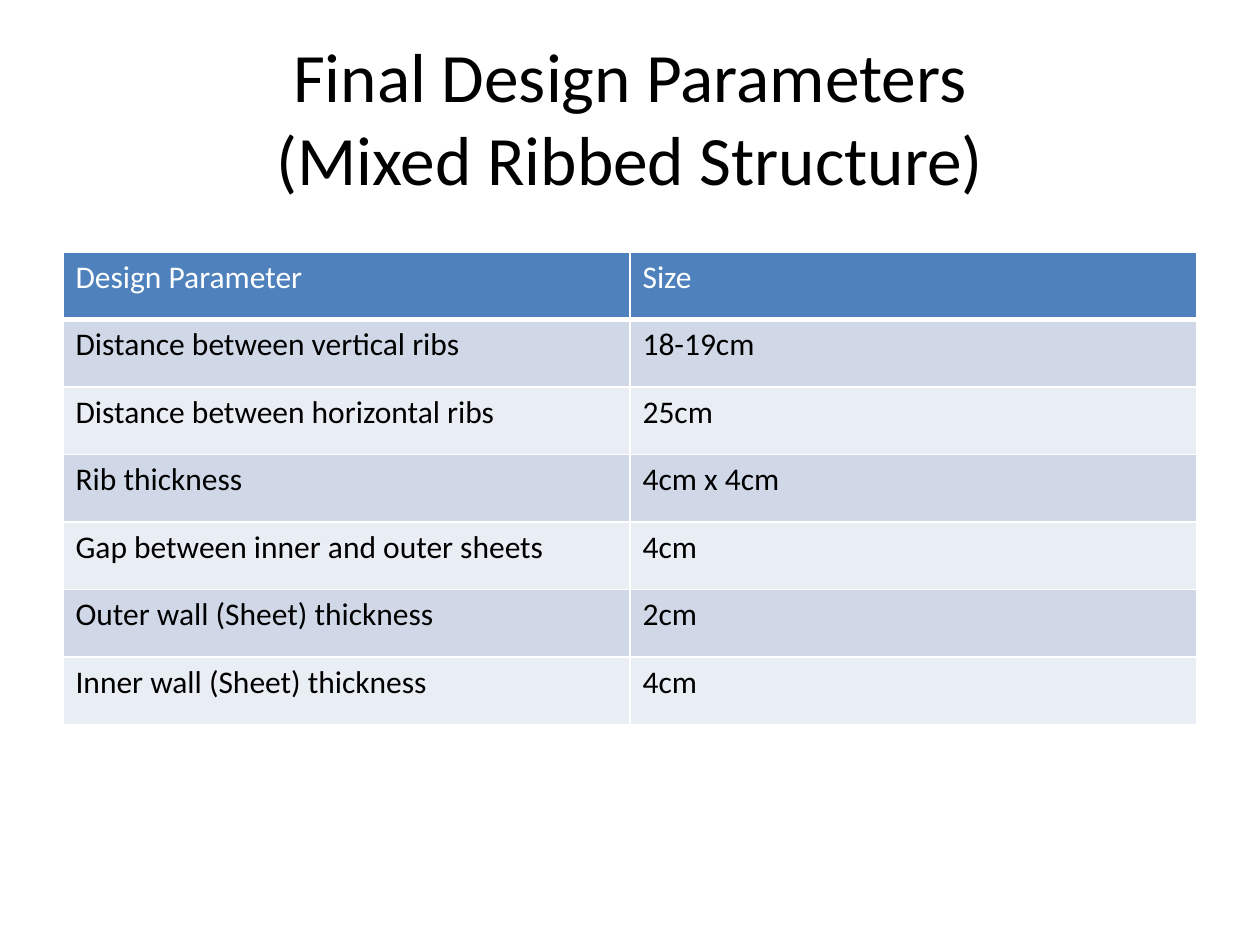
import dataclasses

import lxml.etree
import pptx
import pptx.dml.color
import pptx.enum.text
import pptx.oxml.ns
import pptx.util

Pt = pptx.util.Pt


@dataclasses.dataclass(frozen=True)
class Theme:
    font: str = "Calibri"
    title_size: float = 39.6
    table_size: float = 18
    text: str = "000000"
    header_text: str = "FFFFFF"
    header_fill: str = "4F81BD"
    band_fills: tuple = ("D0D8E8", "E9EDF4")
    border: str = "FFFFFF"
    border_width: float = 1
    header_border_width: float = 3


class SlideBuilder:
    def __init__(self, presentation, theme):
        self.theme = theme
        self.slide = presentation.slides.add_slide(presentation.slide_layouts[5])

    def set_font(self, paragraph, size, color):
        font = paragraph.font
        font.name = self.theme.font
        font.size = Pt(size)
        font.bold = False
        font.color.rgb = pptx.dml.color.RGBColor.from_string(color)

    def add_title(self, text, left, top, width, height):
        title = self.slide.shapes.title
        title.left, title.top = Pt(left), Pt(top)
        title.width, title.height = Pt(width), Pt(height)
        frame = title.text_frame
        frame.text = text
        frame.word_wrap = True
        frame.auto_size = pptx.enum.text.MSO_AUTO_SIZE.NONE
        frame.vertical_anchor = pptx.enum.text.MSO_ANCHOR.MIDDLE
        paragraph = frame.paragraphs[0]
        paragraph.alignment = pptx.enum.text.PP_ALIGN.CENTER
        self.set_font(paragraph, self.theme.title_size, self.theme.text)

    def add_borders(self, cell, bottom_width):
        qualified = pptx.oxml.ns.qn
        properties = cell._tc.get_or_add_tcPr()
        for side in "LRTB":
            width = bottom_width if side == "B" else self.theme.border_width
            line = lxml.etree.SubElement(properties, qualified(f"a:ln{side}"), w=str(Pt(width)))
            fill = lxml.etree.SubElement(line, qualified("a:solidFill"))
            lxml.etree.SubElement(fill, qualified("a:srgbClr"), val=self.theme.border)

    def add_table(self, rows, left, top, width, height):
        theme = self.theme
        shape = self.slide.shapes.add_table(
            len(rows), len(rows[0]), Pt(left), Pt(top), Pt(width), Pt(height)
        )
        for row_index, values in enumerate(rows):
            is_header = row_index == 0
            fill = theme.header_fill if is_header else theme.band_fills[(row_index - 1) % 2]
            color = theme.header_text if is_header else theme.text
            bottom_width = theme.header_border_width if is_header else theme.border_width
            for column_index, value in enumerate(values):
                cell = shape.table.cell(row_index, column_index)
                cell.text = value
                self.add_borders(cell, bottom_width)
                cell.fill.solid()
                cell.fill.fore_color.rgb = pptx.dml.color.RGBColor.from_string(fill)
                self.set_font(cell.text_frame.paragraphs[0], theme.table_size, color)


def main():
    presentation = pptx.Presentation()
    presentation.slide_width = Pt(720)
    presentation.slide_height = Pt(540)
    builder = SlideBuilder(presentation, Theme())
    builder.add_title("Final Design Parameters\v(Mixed Ribbed Structure)", 36, 21.6, 648, 90)
    parameters = [
        ("Design Parameter", "Size"),
        ("Distance between vertical ribs", "18-19cm"),
        ("Distance between horizontal ribs", "25cm"),
        ("Rib thickness", "4cm x 4cm"),
        ("Gap between inner and outer sheets", "4cm"),
        ("Outer wall (Sheet) thickness", "2cm"),
        ("Inner wall (Sheet) thickness", "4cm"),
    ]
    builder.add_table(parameters, 36, 144, 648, 270)
    presentation.save("out.pptx")


if __name__ == "__main__":
    main()
